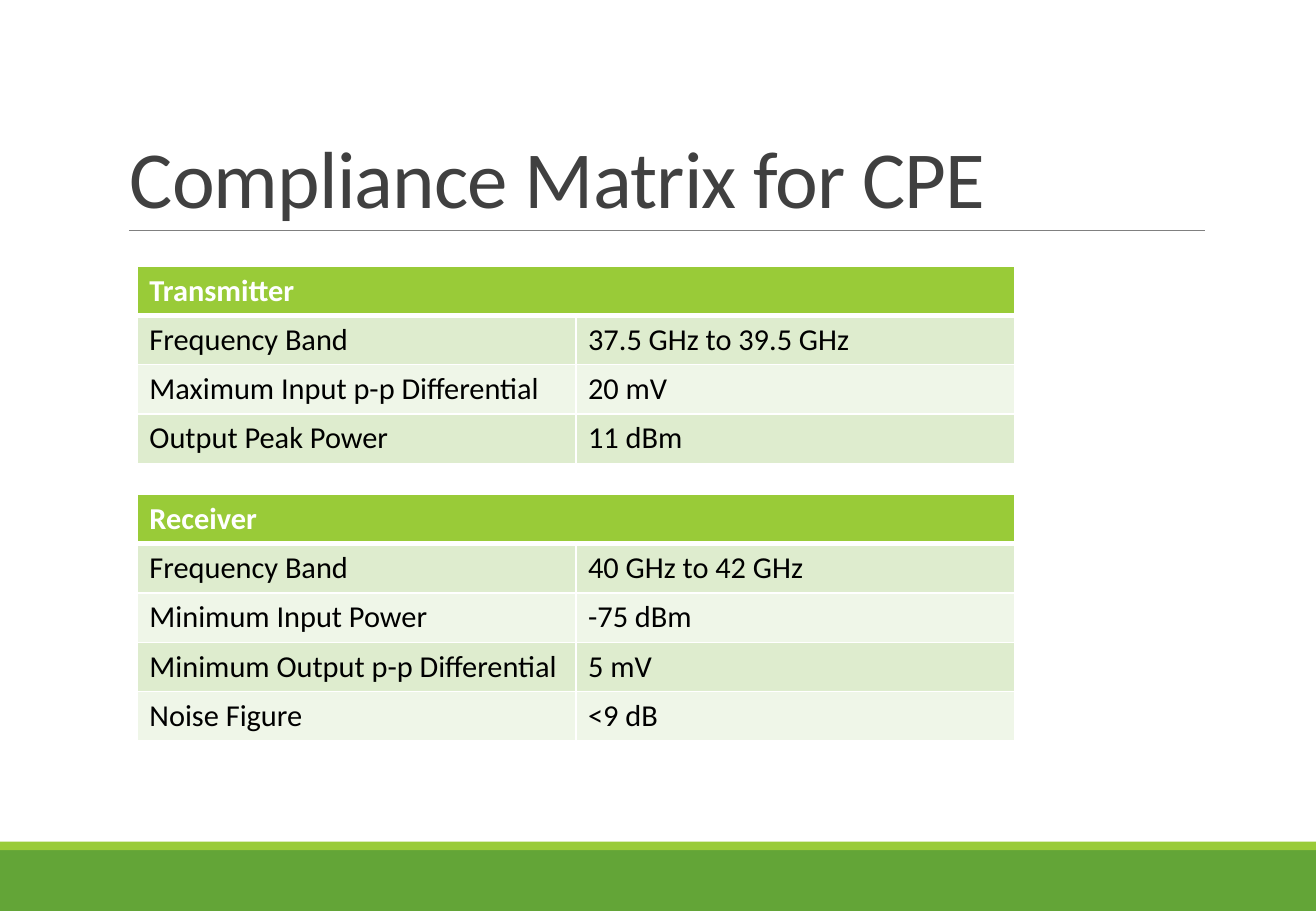
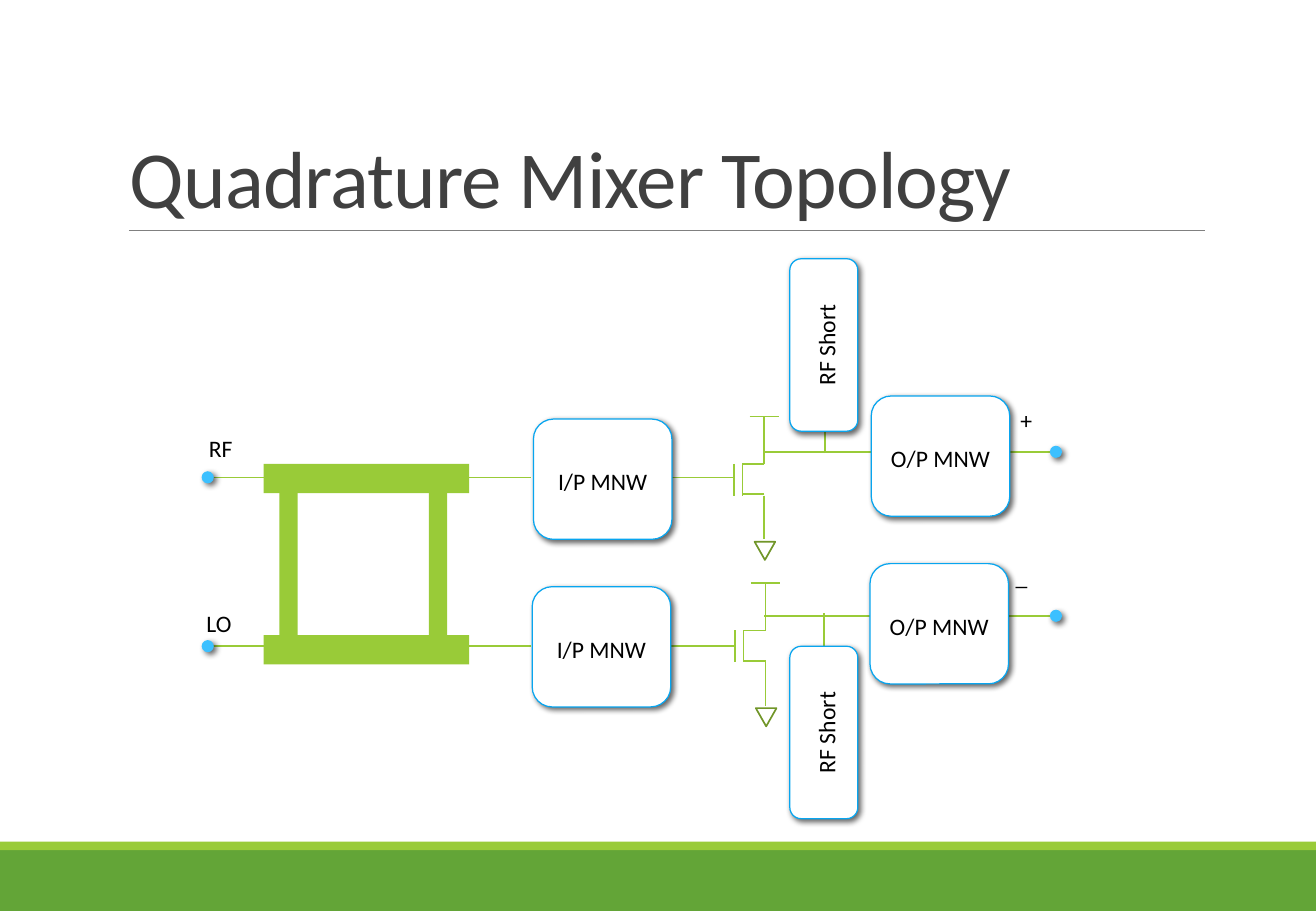
from lxml.etree import SubElement
from pptx import Presentation
from pptx.dml.color import RGBColor
from pptx.enum.shapes import MSO_CONNECTOR, MSO_SHAPE as Shape
from pptx.enum.text import MSO_ANCHOR as Anchor, PP_ALIGN as Align
from pptx.oxml.ns import qn
from pptx.util import Inches, Pt

# Every length is counted in square grid cells of a tenth of an inch.
COLUMNS, ROWS = 108.3, 75
COLORS = {
    "band": "63A537", "accent": "99CB38", "ground": "719629", "rule": "808080",
    "title": "404040", "text": "000000", "white": "FFFFFF",
    "row_dark": "DEECCE", "row_light": "EFF6E8",
    "block_edge": "08A5EF", "terminal": "3CC0FF",
}
FONT = "Calibri"


def cells(*counts):
    return [Inches(count / 10) for count in counts]


def rgb(name):
    return RGBColor.from_string(COLORS[name])


class Deck:
    def __init__(self):
        self.prs = Presentation()
        self.prs.slide_width, self.prs.slide_height = cells(COLUMNS, ROWS)
        self.shapes = None

    def new_slide(self, title):
        """Start a slide with the shared bands, rule and title."""
        self.shapes = self.prs.slides.add_slide(self.prs.slide_layouts[6]).shapes
        self.box(Shape.RECTANGLE, 0, 70, COLUMNS, 5, fill="band")
        self.box(Shape.RECTANGLE, 0, 69.3, COLUMNS, 0.7, fill="accent")
        self.wire(10.6, 19, 99.2, 19, color="rule", weight=0.5)
        frame = self.shapes.add_textbox(*cells(9.7, 3.1, 89.4, 15.9)).text_frame
        frame.word_wrap = True
        frame.vertical_anchor = Anchor.BOTTOM
        frame.paragraphs[0].line_spacing = 0.85
        run = self.add_text(frame, title, 48, "title")
        run.font._element.set("spc", "-50")

    def add_text(self, frame, text, size, color="text", bold=False):
        run = frame.paragraphs[0].add_run()
        run.text = text
        font = run.font
        font.name, font.size, font.bold = FONT, Pt(size), bold
        font.color.rgb = rgb(color)
        return run

    def fill_label(self, frame, text, align):
        frame.word_wrap = False
        paragraph = frame.paragraphs[0]
        paragraph.alignment = align
        paragraph.line_spacing = 1.15
        paragraph.space_after = Pt(10)
        self.add_text(frame, text, 14)

    def box(self, kind, left, top, width, height, fill=None, edge=None,
            weight=1, raised=False):
        shape = self.shapes.add_shape(kind, *cells(left, top, width, height))
        shape.shadow.inherit = False
        if fill:
            shape.fill.solid()
            shape.fill.fore_color.rgb = rgb(fill)
        else:
            shape.fill.background()
        if edge:
            shape.line.color.rgb = rgb(edge)
            shape.line.width = Pt(weight)
        else:
            shape.line.fill.background()
        if raised:
            effects = shape._element.spPr.find(qn("a:effectLst"))
            shadow = SubElement(effects, qn("a:outerShdw"), blurRad=str(Pt(3.5)),
                                dist=str(Pt(2)), dir="2700000", algn="tl")
            tint = SubElement(shadow, qn("a:srgbClr"), val=COLORS["text"])
            SubElement(tint, qn("a:alpha"), val="60000")
        return shape

    def wire(self, x1, y1, x2, y2, color="accent", weight=1):
        line = self.shapes.add_connector(MSO_CONNECTOR.STRAIGHT, *cells(x1, y1, x2, y2))
        line.line.color.rgb = rgb(color)
        line.line.width = Pt(weight)
        SubElement(line._element.spPr, qn("a:effectLst"))

    def block(self, text, left, top, width=11.4, height=9.9, rotation=0):
        shape = self.box(Shape.ROUNDED_RECTANGLE, left, top, width, height,
                         "white", "block_edge", 0.75, raised=True)
        shape.rotation = rotation
        shape.text_frame.vertical_anchor = Anchor.MIDDLE
        self.fill_label(shape.text_frame, text, Align.CENTER)

    def terminal(self, left, top):
        self.box(Shape.OVAL, left, top, 1, 1, fill="terminal", raised=True)

    def label(self, text, left, top, width, height):
        holder = self.shapes.add_textbox(*cells(left, top, width, height))
        self.fill_label(holder.text_frame, text, Align.LEFT)

    def transistor(self, left, top):
        """Draw a transistor with its supply bar above and ground below."""
        for x1, y1, x2, y2 in (
            (1.3, 0, 3.7, 0), (2.5, 0, 2.5, 3.9), (2.5, 3.9, 0.7, 3.9),
            (0.7, 3.9, 0.7, 6.5), (2.5, 6.4, 0.7, 6.4), (2.5, 6.5, 2.5, 10.1),
            (0, 3.9, 0, 6.5),
        ):
            self.wire(left + x1, top + y1, left + x2, top + y2)
        ground = self.box(Shape.ISOSCELES_TRIANGLE, left + 1.7, top + 10.3,
                          1.7, 1.5, edge="ground")
        ground.rotation = 180

    def spec_table(self, top, heading, specs, column=36.1, row=4.06):
        frame = self.shapes.add_table(len(specs) + 1, 2, *cells(
            11.3, top, 2 * column, row * (len(specs) + 1)))
        table = frame.table
        table.horz_banding = False
        for r, texts in enumerate([(heading, ""), *specs]):
            fill = "accent" if r == 0 else ("row_light", "row_dark")[r % 2]
            for c, text in enumerate(texts):
                cell = table.cell(r, c)
                self.cell_borders(cell, top=3 if r == 1 else 1,
                                  bottom=3 if r == 0 else 1)
                cell.fill.solid()
                cell.fill.fore_color.rgb = rgb(fill)
                if text:
                    self.add_text(cell.text_frame, text, 18,
                                  "white" if r == 0 else "text", bold=r == 0)
        table.cell(0, 0).merge(table.cell(0, 1))

    def cell_borders(self, cell, top, bottom):
        properties = cell._tc.get_or_add_tcPr()
        for side, weight in (("L", 1), ("R", 1), ("T", top), ("B", bottom)):
            border = SubElement(properties, qn(f"a:ln{side}"), w=str(Pt(weight)))
            paint = SubElement(border, qn("a:solidFill"))
            SubElement(paint, qn("a:srgbClr"), val=COLORS["white"])


def compliance_slide(deck):
    deck.new_slide("Compliance Matrix for CPE")
    deck.spec_table(21.9, "Transmitter", [
        ("Frequency Band", "37.5 GHz to 39.5 GHz"),
        ("Maximum Input p-p Differential", "20 mV"),
        ("Output Peak Power", "11 dBm"),
    ])
    deck.spec_table(40.7, "Receiver", [
        ("Frequency Band", "40 GHz to 42 GHz"),
        ("Minimum Input Power", "-75 dBm"),
        ("Minimum Output p-p Differential", "5 mV"),
        ("Noise Figure", "<9 dB"),
    ])


def mixer_slide(deck):
    deck.new_slide("Quadrature Mixer Topology")

    input_rows, output_rows = (39.3, 53.2), (37.2, 50.7)
    for y in input_rows:
        deck.wire(17.5, y, 43.7, y)
        deck.wire(55, y, 60.4, y)
    for y in output_rows:
        deck.wire(62.9, y, 86.4, y)
    deck.wire(67.9, 37.3, 67.9, 34.6)
    deck.wire(67.8, 53.2, 67.8, 50.5)

    for coupler_top in (38.2, 52.3):
        deck.box(Shape.RECTANGLE, 21.7, coupler_top, 16.9, 2.4, fill="accent")
    for coupler_left in (23, 35.3):
        deck.box(Shape.RECTANGLE, coupler_left, 40.4, 1.5, 12, fill="accent")

    deck.transistor(60.4, 34.3)
    deck.transistor(60.5, 48)

    for text, left, top in (
        ("I/P MNW", 43.9, 34.5), ("I/P MNW", 43.8, 48.3),
        ("O/P MNW", 71.7, 32.6), ("O/P MNW", 71.6, 46.4),
    ):
        deck.block(text, left, top)
    for short_top in (25.6, 57.5):
        deck.block("RF Short", 60.7, short_top, 14.2, 5.6, rotation=270)

    for left, rows in ((16.6, input_rows), (86.4, output_rows)):
        for y in rows:
            deck.terminal(left, y - 0.5)

    deck.label("RF", 16.2, 34.9, 4.1, 3.8)
    deck.label("LO", 16, 49.3, 4.4, 3.4)
    deck.label("+", 83, 32.6, 5.6, 4.8)
    deck.label("_", 82.6, 45.4, 5.9, 6.3)


def main():
    deck = Deck()
    compliance_slide(deck)
    mixer_slide(deck)
    deck.prs.save("out.pptx")


if __name__ == "__main__":
    main()
